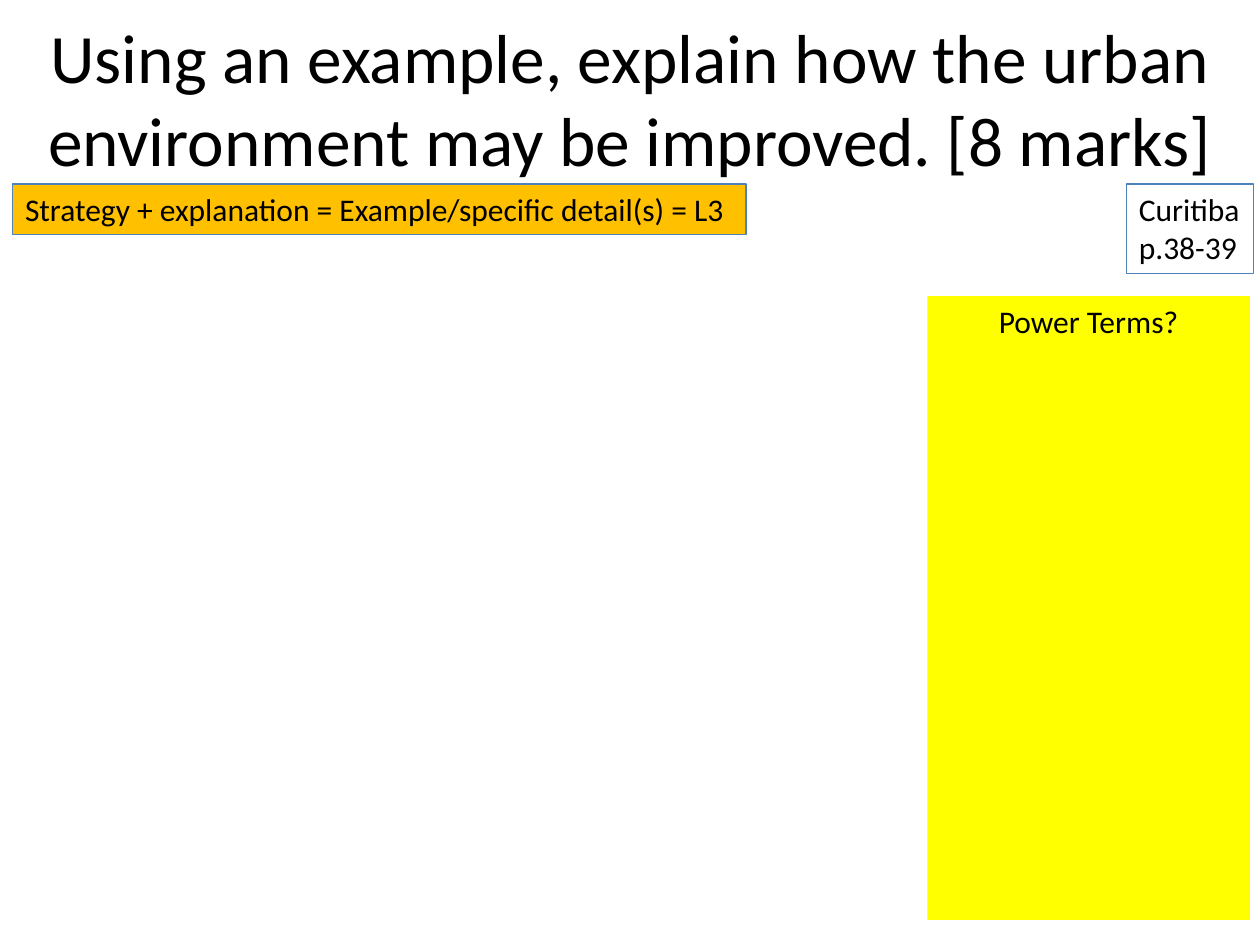
from pptx import Presentation
from pptx.dml.color import RGBColor
from pptx.enum.shapes import MSO_SHAPE
from pptx.enum.text import MSO_ANCHOR, MSO_AUTO_SIZE, PP_ALIGN
from pptx.util import Inches, Pt


def color(hex_string):
    return RGBColor.from_string(hex_string)


class SlideBuilder:
    font = "Calibri"
    text_color = "000000"
    line_color = "4F81BD"
    body_size = 18

    def __init__(self, slide):
        self.slide = slide

    def add_lines(self, tf, lines, size, align):
        for i, line in enumerate(lines):
            p = tf.add_paragraph() if i else tf.paragraphs[0]
            p.alignment = align
            r = p.add_run()
            r.text = line
            r.font.name = self.font
            r.font.size = Pt(size)
            r.font.color.rgb = color(self.text_color)

    def title(self, text, left, top, width, height, size):
        sp = self.slide.shapes.title
        sp.left, sp.top = Inches(left), Inches(top)
        sp.width, sp.height = Inches(width), Inches(height)
        tf = sp.text_frame
        tf.auto_size = MSO_AUTO_SIZE.NONE
        tf.vertical_anchor = MSO_ANCHOR.MIDDLE
        self.add_lines(tf, [text], size, PP_ALIGN.CENTER)

    def box(self, lines, left, top, width, height, fill=None, outlined=True,
            wrap=False, align=PP_ALIGN.LEFT):
        sp = self.slide.shapes.add_shape(
            MSO_SHAPE.RECTANGLE, Inches(left), Inches(top), Inches(width), Inches(height))
        sp.shadow.inherit = False
        if fill:
            sp.fill.solid()
            sp.fill.fore_color.rgb = color(fill)
        else:
            sp.fill.background()
        if outlined:
            sp.line.color.rgb = color(self.line_color)
            sp.line.width = Pt(0.75)
        else:
            sp.line.fill.background()
        tf = sp.text_frame
        tf.word_wrap = wrap
        tf.vertical_anchor = MSO_ANCHOR.TOP
        self.add_lines(tf, lines, self.body_size, align)


def main():
    prs = Presentation()
    prs.slide_width, prs.slide_height = Inches(10), Inches(7.5)
    s = SlideBuilder(prs.slides.add_slide(prs.slide_layouts[5]))
    s.title("Using an example, explain how the urban environment may be improved. [8 marks]",
            0, -0.01, 10, 1.56, 39.6)
    s.box(["Curitiba", "p.38-39"], 8.94, 1.46, 1.01, 0.71)
    s.box(["Strategy + explanation = Example/specific detail(s) = L3"],
          0.1, 1.46, 5.82, 0.4, fill="FFC000")
    s.box(["Power Terms?"], 7.36, 2.35, 2.56, 4.95, fill="FFFF00",
          outlined=False, wrap=True, align=PP_ALIGN.CENTER)
    prs.save("out.pptx")


if __name__ == "__main__":
    main()
